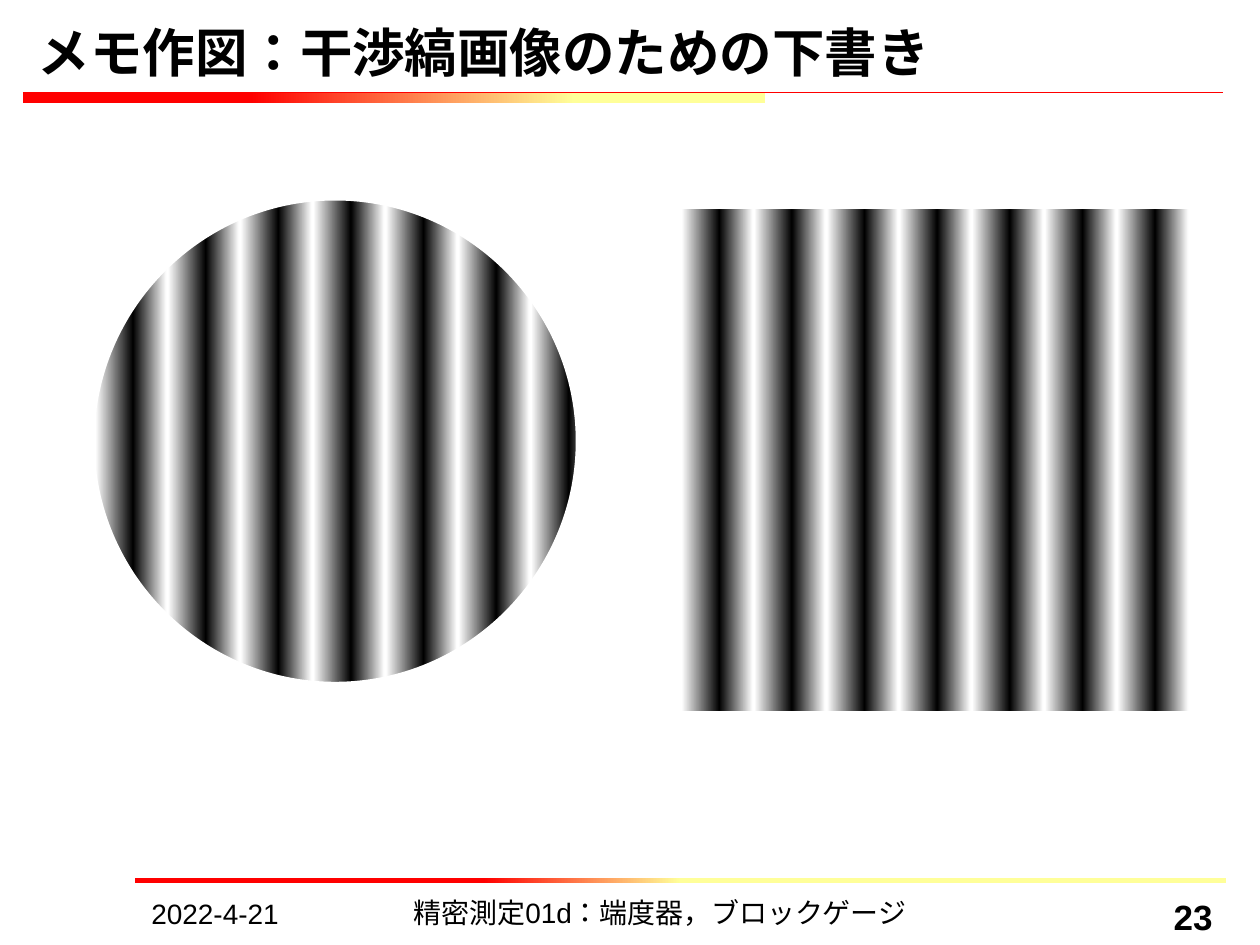
"""Build the slide with two interference fringe drawings."""
from copy import deepcopy

from lxml.etree import SubElement
from pptx import Presentation
from pptx.dml.color import RGBColor
from pptx.enum.lang import MSO_LANGUAGE_ID
from pptx.enum.shapes import MSO_SHAPE
from pptx.enum.text import MSO_ANCHOR, PP_ALIGN
from pptx.oxml.ns import qn
from pptx.util import Pt

BLACK = RGBColor(0, 0, 0)
WHITE = RGBColor(255, 255, 255)
RED = RGBColor(255, 0, 0)
YELLOW = RGBColor(255, 255, 153)

TEXTS = [
    ("メモ作図：干渉縞画像のための下書き", (14.4, 15.1, 686, 36), 30, True,
     PP_ALIGN.LEFT, MSO_ANCHOR.BOTTOM),
    ("2022-4-21", (79.4, 509, 101.5, 21.6), 16, False, PP_ALIGN.LEFT, MSO_ANCHOR.TOP),
    ("精密測定01d：端度器，ブロックゲージ", (190, 508.3, 374.4, 21), 16, False,
     PP_ALIGN.CENTER, MSO_ANCHOR.TOP),
    ("23", (581.2, 508.3, 118.8, 21), 20, True, PP_ALIGN.RIGHT, MSO_ANCHOR.TOP),
]
FOOT = (77, 501.8, 623.5, 2.9)
FOOT_STOPS = [(0.5, YELLOW), (0.68, RED)]
HEAD = [(13, 53), (437, 53), (437, 58.7), (13, 58.7)]
RULE = [(13, 53), (699, 53)]
HEAD_STOPS = [(0.54, YELLOW), (0.81, RED)]
FRINGE = [(0, WHITE), (0.53, BLACK), (1, WHITE)]
GRIDS = [(54.6, 113.8), (389.6, 119.5)]
COUNT, PITCH, WIDTH, HEIGHT = 7, 41.5, 40.5, 286.6
CENTER, RADIUS, HALF, BEND = (191.5, 252.1), 137.5, 157, 0.55
SQUARE = [(-1, -1), (1, -1), (1, 1), (-1, 1)]
CIRCLE = [(0, -1), (-BEND, -1), (-1, -BEND), (-1, 0), (-1, BEND), (-BEND, 1), (0, 1),
          (BEND, 1), (1, BEND), (1, 0), (1, -BEND), (BEND, -1), (0, -1)]


def blend(shape, stops, angle):
    shape.fill.gradient()
    shape.fill.gradient_angle = angle
    nodes = shape.fill.gradient_stops
    if len(stops) > len(nodes):
        listing = shape._element.spPr.find(qn("a:gradFill")).find(qn("a:gsLst"))
        listing.append(deepcopy(listing[-1]))
        nodes = shape.fill.gradient_stops
    for node, (place, color) in zip(nodes, stops):
        node.position = place
        node.color.rgb = color


def add_bar(shapes, box, stops, angle):
    bar = shapes.add_shape(MSO_SHAPE.RECTANGLE, *map(Pt, box))
    bar.shadow.inherit = False
    bar.line.fill.background()
    blend(bar, stops, angle)


def add_free(shapes, first, second, close):
    outer, inner = ([(Pt(x), Pt(y)) for x, y in ring] for ring in (first, second))
    draft = shapes.build_freeform(*outer[0])
    draft.add_line_segments(outer[1:])
    draft.move_to(*inner[0])
    draft.add_line_segments(inner[1:], close=close)
    shape = draft.convert_to_shape()
    shape.shadow.inherit = False
    return shape, next(shape._element.iter(qn("a:path")))


def add_head(shapes):
    head, band = add_free(shapes, HEAD, RULE, False)
    rule = deepcopy(band)
    band.addnext(rule)
    band.set("stroke", "0")
    for node in band[-len(RULE):]:
        band.remove(node)
    for node in rule[:-len(RULE)]:
        rule.remove(node)
    blend(head, HEAD_STOPS, 180)
    head.line.color.rgb = RED
    head.line.width = Pt(0.75)


def add_text(shapes, text, box, size, bold, align, anchor):
    frame = shapes.add_textbox(*map(Pt, box)).text_frame
    frame.word_wrap = True
    frame.vertical_anchor = anchor
    para = frame.paragraphs[0]
    para.alignment = align
    run = para.add_run()
    run.text = text
    run.font.name = "Arial"
    run.font.size = Pt(size)
    run.font.bold = bold
    run.font.color.rgb = BLACK
    run.font.language_id = MSO_LANGUAGE_ID.JAPANESE


def add_grid(shapes, left, top):
    group = shapes.add_group_shape()
    for index in range(COUNT):
        box = (left + index * PITCH, top, WIDTH, HEIGHT)
        add_bar(group.shapes, box, FRINGE, 0)


def add_mask(shapes):
    mid, row = CENTER
    rings = [[(mid + size * x, row + size * y) for x, y in ring]
             for ring, size in ((SQUARE, HALF), (CIRCLE, RADIUS))]
    mask, path = add_free(shapes, *rings, True)
    lines = path.findall(qn("a:lnTo"))[1 - len(CIRCLE):]
    end = path[-1]
    for start in range(0, len(lines), 3):
        curve = SubElement(path, qn("a:cubicBezTo"))
        for line in lines[start:start + 3]:
            curve.append(line[0])
            path.remove(line)
    path.append(end)
    mask.fill.solid()
    mask.fill.fore_color.rgb = WHITE
    mask.line.fill.background()


def main():
    deck = Presentation()
    deck.slide_width, deck.slide_height = Pt(720), Pt(540)
    shapes = deck.slides.add_slide(deck.slide_layouts[6]).shapes
    add_bar(shapes, FOOT, FOOT_STOPS, 180)
    add_head(shapes)
    for item in TEXTS:
        add_text(shapes, *item)
    add_grid(shapes, *GRIDS[0])
    add_mask(shapes)
    add_grid(shapes, *GRIDS[1])
    deck.save("out.pptx")


if __name__ == "__main__":
    main()
